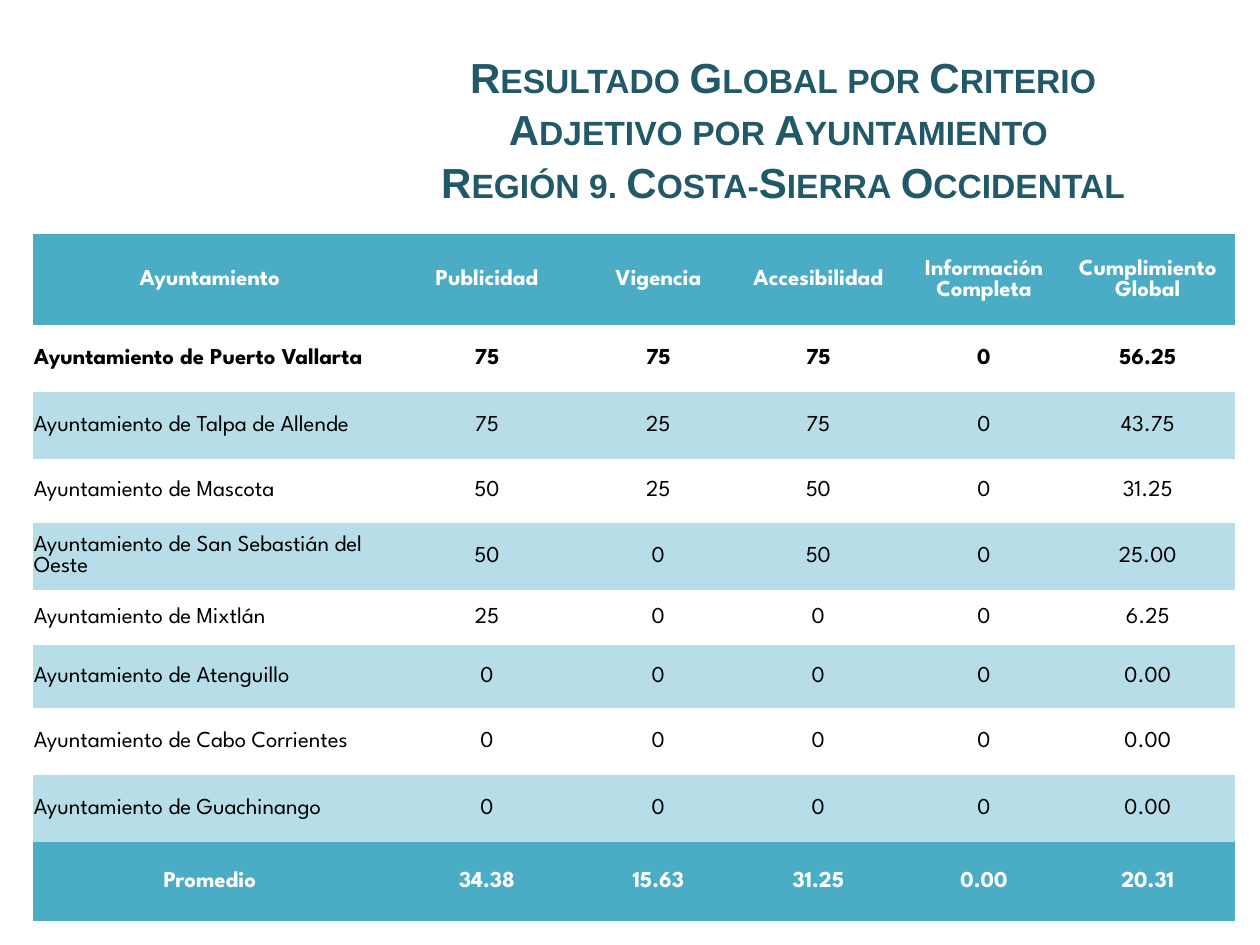
from copy import deepcopy

from pptx import Presentation
from pptx.dml.color import RGBColor
from pptx.enum.text import MSO_ANCHOR, PP_ALIGN
from pptx.util import Inches, Pt

MIDDLE = MSO_ANCHOR.MIDDLE
CENTER, LEFT = PP_ALIGN.CENTER, PP_ALIGN.LEFT

TITLE_COLOR = RGBColor(0x21, 0x59, 0x68)
TEAL = RGBColor(0x4B, 0xAC, 0xC6)
PALE_TEAL = RGBColor(0xB7, 0xDE, 0xE8)
WHITE = RGBColor(0xFF, 0xFF, 0xFF)
BLACK = RGBColor(0, 0, 0)
NO_GRID_STYLE = "{2D5ABB26-0587-4C30-8999-92F81FD0307C}"

TITLE = ("Resultado Global por Criterio Adjetivo por Ayuntamiento \v"
         "Región 9. Costa-Sierra Occidental")
HEADER = ("Ayuntamiento", "Publicidad", "Vigencia", "Accesibilidad",
          "Información\vCompleta", "Cumplimiento Global")
RESULTS = [
    ("Puerto Vallarta", "75", "75", "75", "0", "56.25"),
    ("Talpa de Allende", "75", "25", "75", "0", "43.75"),
    ("Mascota", "50", "25", "50", "0", "31.25"),
    ("San Sebastián del Oeste", "50", "0", "50", "0", "25.00"),
    ("Mixtlán", "25", "0", "0", "0", "6.25"),
    ("Atenguillo", "0", "0", "0", "0", "0.00"),
    ("Cabo Corrientes", "0", "0", "0", "0", "0.00"),
    ("Guachinango", "0", "0", "0", "0", "0.00"),
]
AVERAGE = ("Promedio", "34.38", "15.63", "31.25", "0.00", "20.31")
COLUMN_WIDTHS = (2.81, 1.59, 1.13, 1.41, 1.22, 1.38)
ROW_HEIGHTS = (0.72, 0.53, 0.53, 0.51, 0.53, 0.44, 0.5, 0.53, 0.53, 0.63)
CELL_FORMAT = {
    "vertical_anchor": MIDDLE, "margin_left": Inches(0.01),
    "margin_right": Inches(0.01), "margin_top": Inches(0.01), "margin_bottom": 0,
}


def write(frame, text, alignment, font_format):
    frame.text = text
    paragraph = frame.paragraphs[0]
    paragraph.alignment = alignment
    for run in paragraph.runs:
        for attribute, value in font_format.items():
            setattr(run.font, attribute, value)
        run.font.color.rgb = font_color(font_format)
    return paragraph


def font_color(font_format):
    return COLORS[font_format["name"], font_format["bold"]]


def style_runs(paragraph, color, font_format):
    for run in paragraph.runs:
        run.font.color.rgb = color
        for attribute, value in font_format.items():
            setattr(run.font, attribute, value)
    run_properties = paragraph.runs[0].font._element
    for line_break in paragraph._p.findall("{*}br"):
        line_break.insert(0, deepcopy(run_properties))


def write(frame, text, alignment, color, font_format):
    frame.text = text
    paragraph = frame.paragraphs[0]
    paragraph.alignment = alignment
    style_runs(paragraph, color, font_format)
    return paragraph


def add_title(slide):
    frame = slide.shapes.add_textbox(
        Inches(2.94), Inches(0.39), Inches(6.55), Inches(1.25)).text_frame
    frame.word_wrap = True
    frame.vertical_anchor = MIDDLE
    paragraph = write(frame, TITLE, CENTER, TITLE_COLOR,
                      {"name": "Arial", "size": Pt(24), "bold": True})
    paragraph.line_spacing = 1.05
    for run in paragraph.runs:
        run.font._element.set("cap", "small")


def add_results(slide):
    rows = [HEADER]
    rows += [(f"Ayuntamiento de {town}", *scores) for town, *scores in RESULTS]
    rows.append(AVERAGE)
    table = slide.shapes.add_table(
        len(rows), len(HEADER), Inches(0.26), Inches(1.86),
        Inches(sum(COLUMN_WIDTHS)), Inches(sum(ROW_HEIGHTS))).table
    table.first_row = table.horz_banding = False
    table._tbl.tblPr.find("{*}tableStyleId").text = NO_GRID_STYLE
    for column, width in zip(table.columns, COLUMN_WIDTHS):
        column.width = Inches(width)
    for row, height in zip(table.rows, ROW_HEIGHTS):
        row.height = Inches(height)

    for r, texts in enumerate(rows):
        is_edge = r in (0, len(rows) - 1)
        fill_color = TEAL if is_edge else PALE_TEAL if r % 2 == 0 else None
        font_format = {"name": "League Spartan", "size": Pt(13),
                       "bold": is_edge or r == 1}
        for c, text in enumerate(texts):
            cell = table.cell(r, c)
            for attribute, value in CELL_FORMAT.items():
                setattr(cell, attribute, value)
            if fill_color is None:
                cell.fill.background()
            else:
                cell.fill.solid()
                cell.fill.fore_color.rgb = fill_color
            write(cell.text_frame, text, CENTER if is_edge or c else LEFT,
                  WHITE if is_edge else BLACK, font_format)


def main():
    deck = Presentation()
    deck.slide_width, deck.slide_height = Inches(10), Inches(7.5)
    slide = deck.slides.add_slide(deck.slide_layouts[6])
    add_title(slide)
    add_results(slide)
    deck.save("out.pptx")


if __name__ == "__main__":
    main()
